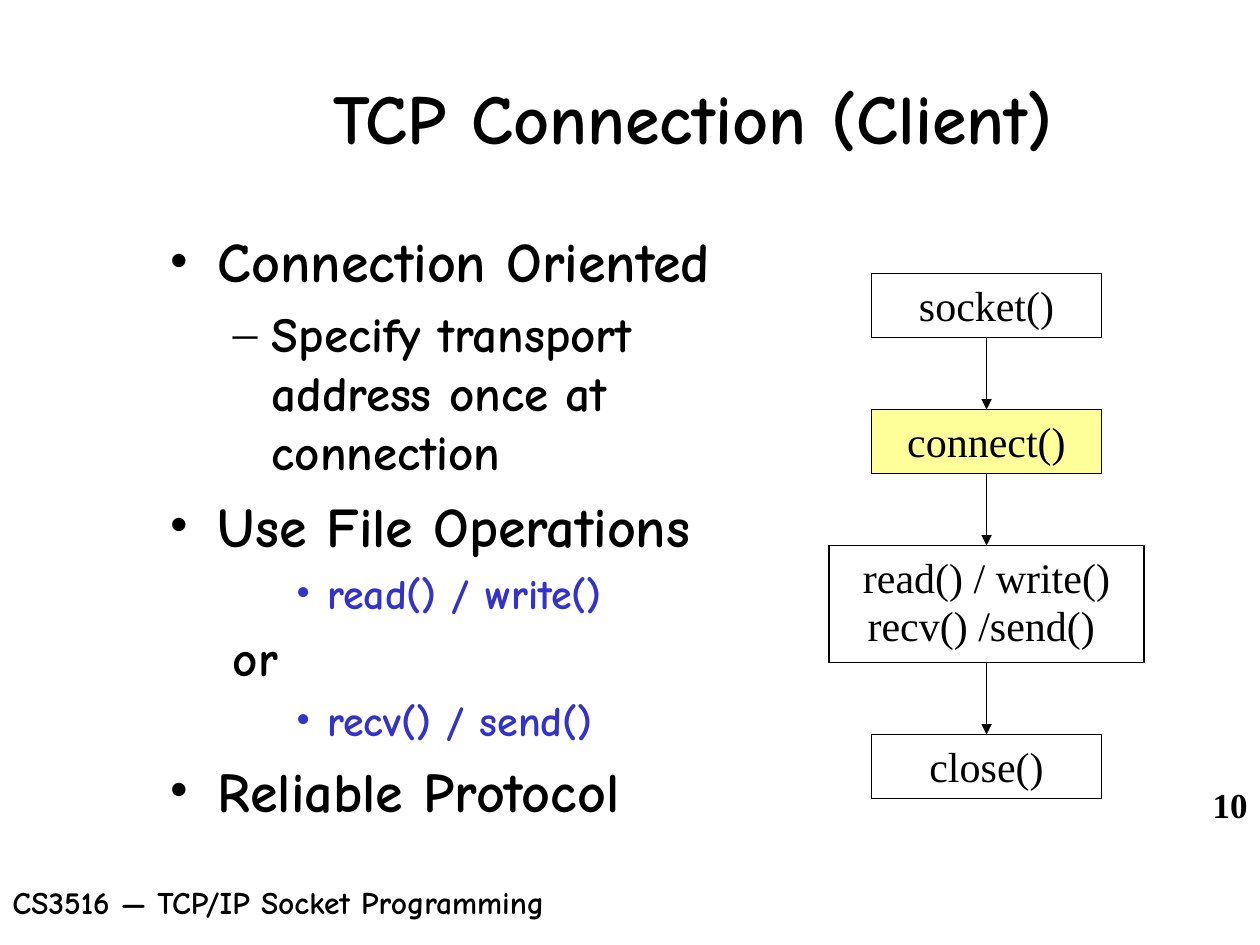
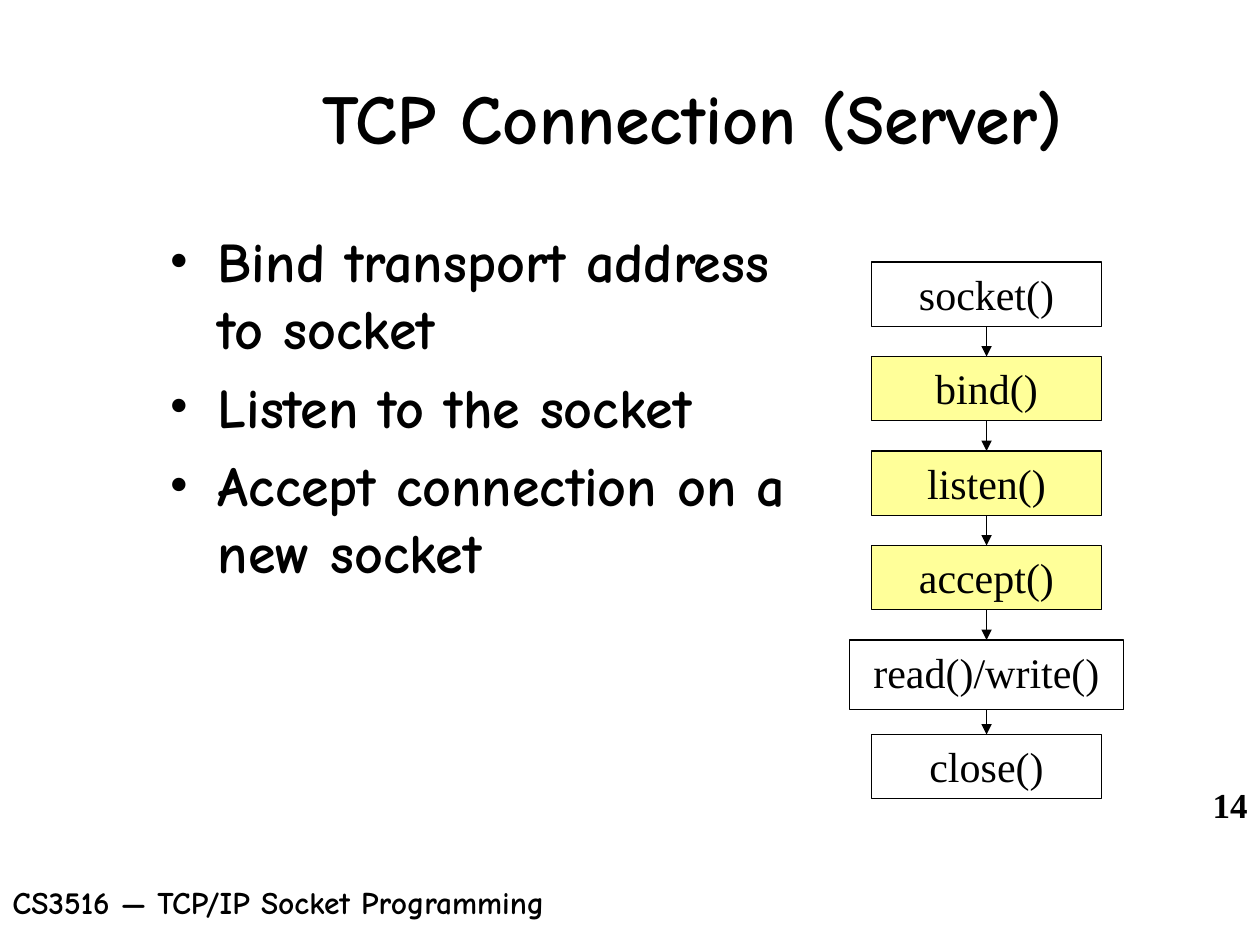
from dataclasses import dataclass

from lxml import etree
from pptx import Presentation
from pptx.dml.color import RGBColor
from pptx.enum.shapes import MSO_CONNECTOR, MSO_SHAPE
from pptx.enum.text import MSO_ANCHOR, PP_ALIGN
from pptx.oxml.ns import qn
from pptx.util import Inches, Pt

RECT = MSO_SHAPE.RECTANGLE
STRAIGHT = MSO_CONNECTOR.STRAIGHT
LEFT, CENTER, RIGHT = PP_ALIGN.LEFT, PP_ALIGN.CENTER, PP_ALIGN.RIGHT
TOP, MIDDLE = MSO_ANCHOR.TOP, MSO_ANCHOR.MIDDLE
TITLE_ONLY = 5


@dataclass(frozen=True)
class Theme:
    hand: str = "Comic Neue"
    serif: str = "Times New Roman"
    ink: RGBColor = RGBColor(0x00, 0x00, 0x00)
    code: RGBColor = RGBColor(0x33, 0x33, 0xCC)
    highlight: RGBColor = RGBColor(0xFF, 0xFF, 0x99)
    paper: RGBColor = RGBColor(0xFF, 0xFF, 0xFF)
    title_size: int = 40
    body_sizes: tuple = (32, 28, 24)
    flow_size: int = 24
    footer_size: int = 18
    number_size: int = 20
    line_width: float = 0.75
    indents: tuple = ((0.38, 0.38), (0.81, 0.31), (1.25, 0.25))
    bullets: tuple = ("•", "–", "•")


class Deck:
    def __init__(self, theme):
        self.theme = theme
        self.prs = Presentation()
        self.prs.slide_width = Inches(10)
        self.prs.slide_height = Inches(7.5)
        self.s = None

    def add_text(self, p, text, size, font, bold=True, color=None):
        r = p.add_run()
        r.text = text
        style = {"name": font, "size": Pt(size), "bold": bold}
        for name, value in style.items():
            setattr(r.font, name, value)
        r.font.color.rgb = color or self.theme.ink

    def frame(self, sp, anchor=TOP):
        tf = sp.text_frame
        tf.word_wrap = True
        tf.vertical_anchor = anchor
        return tf

    def textbox(self, at):
        return self.frame(self.s.shapes.add_textbox(*map(Inches, at)))

    def label(self, at, text, size, font, align=LEFT, spacing=1.0):
        p = self.textbox(at).paragraphs[0]
        p.alignment = align
        p.line_spacing = spacing
        self.add_text(p, text, size, font)

    def slide(self, title, number):
        t = self.theme
        self.s = self.prs.slides.add_slide(self.prs.slide_layouts[TITLE_ONLY])
        self.s.background.fill.solid()
        self.s.background.fill.fore_color.rgb = t.paper
        sp = self.s.shapes.title
        place = {"left": 1.25, "top": 0.3, "width": 8.5, "height": 1.25}
        for name, value in place.items():
            setattr(sp, name, Inches(value))
        p = self.frame(sp, MIDDLE).paragraphs[0]
        p.alignment = CENTER
        self.add_text(p, title, t.title_size, t.hand)
        self.label((0, 6.99, 5.55, 0.51), "CS3516 — TCP/IP Socket Programming",
                   t.footer_size, t.hand, spacing=0.9)
        self.label((9.45, 6.17, 0.55, 0.52), str(number),
                   t.number_size, t.serif, RIGHT)

    def bullet(self, p, level, mark):
        margin, hang = self.theme.indents[level]
        pPr = p._p.get_or_add_pPr()
        pPr.set("marL", str(Inches(margin)))
        pPr.set("indent", str(-Inches(hang)))
        if mark:
            etree.SubElement(pPr, qn("a:buFont")).set("typeface", self.theme.serif)
            etree.SubElement(pPr, qn("a:buChar")).set("char", mark)
        else:
            etree.SubElement(pPr, qn("a:buNone"))

    def body(self, items):
        t = self.theme
        tf = self.textbox((1.25, 1.75, 5.22, 4.95))
        for i, (level, text, marked) in enumerate(items):
            p = tf.add_paragraph() if i else tf.paragraphs[0]
            p.level = level
            size = t.body_sizes[level]
            self.bullet(p, level, t.bullets[level] if marked else None)
            p.space_before = Pt(0.2 * size if i else 0)
            self.add_text(p, text, size, t.hand, color=t.code if level == 2 else t.ink)

    def box(self, center, top, width, height, lines, highlighted):
        t = self.theme
        sp = self.s.shapes.add_shape(RECT, Inches(center - width / 2), Inches(top),
                                     Inches(width), Inches(height))
        sp.shadow.inherit = False
        if highlighted:
            sp.fill.solid()
            sp.fill.fore_color.rgb = t.highlight
        else:
            sp.fill.background()
        sp.line.color.rgb = t.ink
        sp.line.width = Pt(t.line_width)
        tf = self.frame(sp)
        for i, text in enumerate(lines):
            p = tf.add_paragraph() if i else tf.paragraphs[0]
            p.alignment = CENTER
            p.line_spacing = 0.97 if i else 1.0
            self.add_text(p, text, t.flow_size, t.serif, bold=False)

    def arrow(self, x, start, end):
        c = self.s.shapes.add_connector(STRAIGHT, Inches(x), Inches(start),
                                        Inches(x), Inches(end))
        c.line.color.rgb = self.theme.ink
        c.line.width = Pt(self.theme.line_width)
        spPr = c._element.spPr
        etree.SubElement(spPr.find(qn("a:ln")), qn("a:tailEnd")).set("type", "triangle")
        etree.SubElement(spPr, qn("a:effectLst"))

    def flow(self, tops, steps, highlighted, sizes):
        center = 7.83
        bottom = None
        for top, step in zip(tops, steps):
            width, height = sizes.get(step, (1.83, 0.51))
            if bottom is not None:
                self.arrow(center, bottom, top)
            self.box(center, top, width, height, step.split("\n"), step in highlighted)
            bottom = top + height


def main():
    deck = Deck(Theme())

    deck.slide("TCP Connection (Client)", 10)
    deck.body([
        (0, "Connection Oriented", True),
        (1, "Specify transport address once at connection", True),
        (0, "Use File Operations", True),
        (2, "read() / write()", True),
        (1, "or", False),
        (2, "recv() / send()", True),
        (0, "Reliable Protocol", True),
    ])
    transfer = "read() / write()\nrecv() /send() "
    deck.flow([2.17, 3.25, 4.33, 5.83],
              ["socket()", "connect()", transfer, "close()"],
              {"connect()"}, {transfer: (2.5, 0.93)})

    deck.slide("TCP Connection (Server)", 14)
    deck.body([
        (0, "Bind transport address to socket", True),
        (0, "Listen to the socket", True),
        (0, "Accept connection on a new socket", True),
    ])
    transfer = "read()/write()"
    deck.flow([2.08 + 0.75 * i for i in range(6)],
              ["socket()", "bind()", "listen()", "accept()", transfer, "close()"],
              {"bind()", "listen()", "accept()"}, {transfer: (2.17, 0.55)})

    deck.prs.save("out.pptx")


if __name__ == "__main__":
    main()
